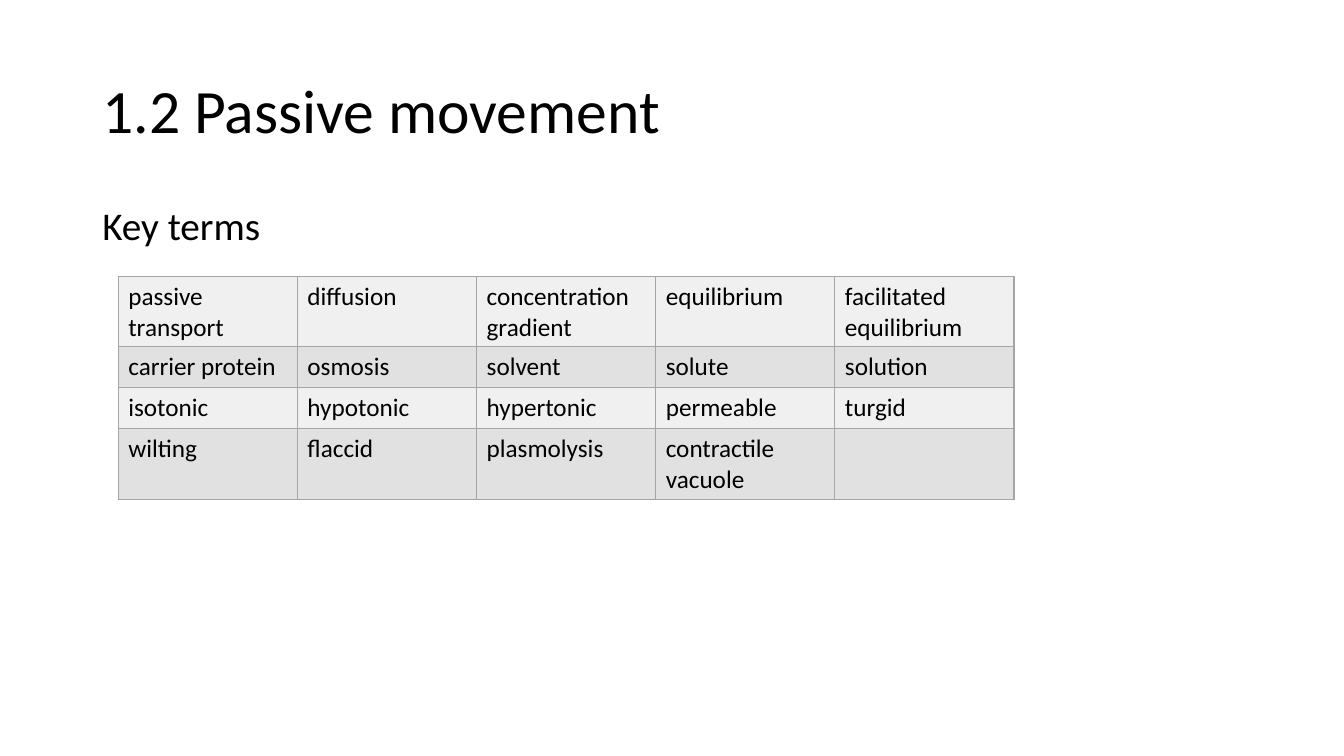
from lxml.etree import SubElement
from pptx import Presentation
from pptx.dml.color import RGBColor
from pptx.enum.text import MSO_ANCHOR as Anchor
from pptx.oxml.ns import qn
from pptx.util import Cm, Pt

FONT = "Calibri"
BLACK = "000000"
BORDER = "A5A5A5"
BANDS = ("F0F0F0", "E1E1E1")
KEY_TERMS = [
    ["passive transport", "diffusion", "concentration gradient", "equilibrium", "facilitated equilibrium"],
    ["carrier protein", "osmosis", "solvent", "solute", "solution"],
    ["isotonic", "hypotonic", "hypertonic", "permeable", "turgid"],
    ["wilting", "flaccid", "plasmolysis", "contractile vacuole", ""],
]


def color(hex_code):
    """Turn a hex string into a colour."""
    return RGBColor.from_string(hex_code)


def style_paragraph(paragraph, size):
    """Give a paragraph and its runs the slide's font."""
    for font in [paragraph.font] + [run.font for run in paragraph.runs]:
        font.name = FONT
        font.size = Pt(size)
        font.color.rgb = color(BLACK)


def add_heading(slide, box, wording, size, anchor, space_before=0):
    """Place a line of text in the given box."""
    frame = slide.shapes.add_textbox(*box).text_frame
    frame.word_wrap = True
    frame.vertical_anchor = anchor
    frame.text = wording
    paragraph = frame.paragraphs[0]
    paragraph.line_spacing = 0.9
    paragraph.space_before = Pt(space_before)
    style_paragraph(paragraph, size)


def add_borders(cell):
    """Draw a thin line on all four sides of a cell."""
    properties = cell._tc.get_or_add_tcPr()
    for side in ("lnL", "lnR", "lnT", "lnB"):
        line = SubElement(properties, qn(f"a:{side}"), w=str(Pt(1)))
        fill = SubElement(line, qn("a:solidFill"))
        SubElement(fill, qn("a:srgbClr"), val=BORDER)


def add_key_terms(slide, box):
    """Fill the given box with the banded grid of key terms."""
    table = slide.shapes.add_table(len(KEY_TERMS), len(KEY_TERMS[0]), *box).table
    table.first_row = False
    for row_index, terms in enumerate(KEY_TERMS):
        for column_index, term in enumerate(terms):
            cell = table.cell(row_index, column_index)
            cell.text = term
            style_paragraph(cell.text_frame.paragraphs[0], 18)
            add_borders(cell)
            cell.fill.solid()
            cell.fill.fore_color.rgb = color(BANDS[row_index % 2])


def main():
    """Build the key terms slide and save it."""
    deck = Presentation()
    deck.slide_width, deck.slide_height = Cm(33.87), Cm(19.05)
    slide = deck.slides.add_slide(deck.slide_layouts[6])
    left, width = Cm(2.33), Cm(29.21)
    add_heading(slide, (left, Cm(1.01), width, Cm(3.68)), "1.2 Passive movement", 44, Anchor.MIDDLE)
    add_heading(slide, (left, Cm(5.07), width, Cm(12.09)), "Key terms", 28, Anchor.TOP, 10)
    add_key_terms(slide, (left + Cm(0.65), Cm(6.96), Cm(22.58), Cm(4.12)))
    deck.save("out.pptx")


if __name__ == "__main__":
    main()
